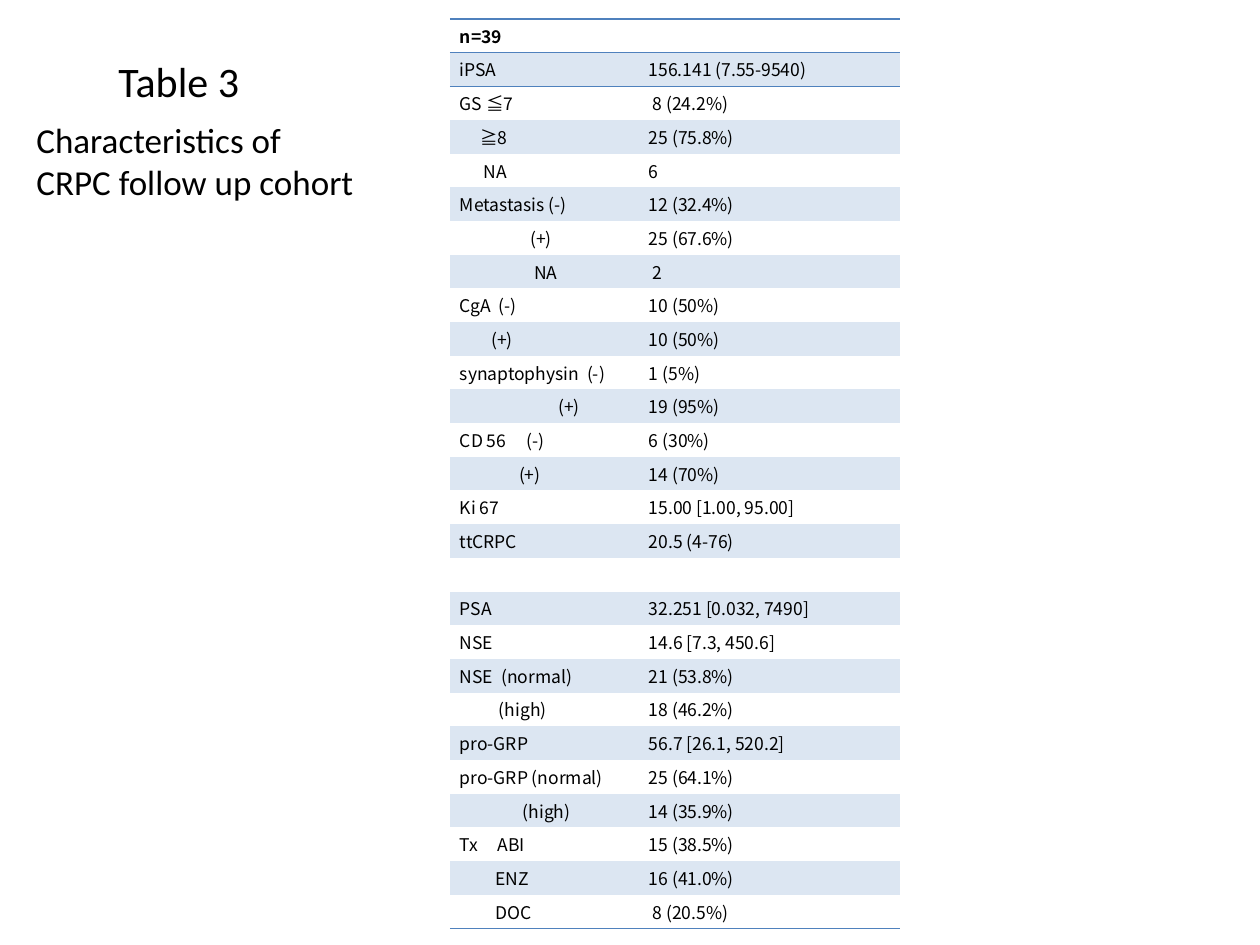
from lxml import etree
from pptx import Presentation
from pptx.dml.color import RGBColor
from pptx.enum.text import MSO_ANCHOR, MSO_AUTO_SIZE, PP_ALIGN
from pptx.oxml.ns import qn
from pptx.util import Inches, Pt

LEFT = PP_ALIGN.LEFT
TOP, MIDDLE = MSO_ANCHOR.TOP, MSO_ANCHOR.MIDDLE
FIXED = MSO_AUTO_SIZE.NONE
SANS, CJK = "Calibri", "Noto Sans CJK JP"
BLACK, BLUE, PALE = "000000", "4F81BD", "DCE6F2"
PLAIN_STYLE = "{2D5ABB26-0587-4C30-8999-92F81FD0307C}"

# Each row: label, offset of its indent or tab stop, value, indent of the value
ROWS = [
    ("n=39", 0, "", 0),
    ("iPSA", 0, "156.141 (7.55-9540)", 0),
    ("GS ≦7", 0, "8 (24.2%)", 0.03),
    ("≧8", 0.16, "25 (75.8%)", 0),
    ("NA", 0.19, "6", 0),
    ("Metastasis (-)", 0, "12 (32.4%)", 0),
    ("(+)", 0.56, "25 (67.6%)", 0),
    ("NA", 0.59, "2", 0.03),
    ("CgA\t(-)", 0.31, "10 (50%)", 0),
    ("(+)", 0.25, "10 (50%)", 0),
    ("synaptophysin\t(-)", 1.01, "1 (5%)", 0),
    ("(+)", 0.78, "19 (95%)", 0),
    ("CD 56\t(-)", 0.53, "6 (30%)", 0),
    ("(+)", 0.47, "14 (70%)", 0),
    ("Ki 67", 0, "15.00 [1.00, 95.00]", 0),
    ("ttCRPC", 0, "20.5 (4-76)", 0),
    ("", 0, "", 0),
    ("PSA", 0, "32.251 [0.032, 7490]", 0),
    ("NSE", 0, "14.6 [7.3, 450.6]", 0),
    ("NSE\t(normal)", 0.33, "21 (53.8%)", 0),
    ("(high)", 0.31, "18 (46.2%)", 0),
    ("pro-GRP", 0, "56.7 [26.1, 520.2]", 0),
    ("pro-GRP (normal)", 0, "25 (64.1%)", 0),
    ("(high)", 0.5, "14 (35.9%)", 0),
    ("Tx\tABI", 0.3, "15 (38.5%)", 0),
    ("ENZ", 0.28, "16 (41.0%)", 0),
    ("DOC", 0.28, "8 (20.5%)", 0.03),
]


def color(code):
    """Return the colour for a hex string."""
    return RGBColor.from_string(code)


def style(para, size, face, bold=False):
    """Set the font and alignment of a paragraph."""
    para.alignment = LEFT
    font = para.font
    font.size, font.name, font.bold = Pt(size), face, bold
    font.color.rgb = color(BLACK)


def write(shape, lines, size, box):
    """Place a shape and fill it with left-aligned lines."""
    shape.left, shape.top, shape.width, shape.height = map(Inches, box)
    frame = shape.text_frame
    frame.text = "\n".join(lines)
    frame.auto_size = FIXED
    frame.word_wrap = len(lines) > 1
    frame.vertical_anchor = TOP
    for para in frame.paragraphs:
        style(para, size, SANS)


def shift(para, inches):
    """Indent a paragraph, or set its tab stop if it holds a tab."""
    props = para._p.get_or_add_pPr()
    offset = str(Inches(inches))
    if "\t" in para.text:
        tabs = etree.SubElement(props, qn("a:tabLst"))
        etree.SubElement(tabs, qn("a:tab"), pos=offset, algn="l")
    else:
        props.set("marL", offset)
        props.set("indent", "0")


def rule(cell, side):
    """Draw a blue border on one side of a cell."""
    props = cell._tc.get_or_add_tcPr()
    line = etree.Element(qn("a:" + side), w=str(Pt(0.96)))
    fill = etree.SubElement(line, qn("a:solidFill"))
    etree.SubElement(fill, qn("a:srgbClr"), val=BLUE)
    props.insert(len(props) - 1, line)


def fill_cell(cell, text, offset, row):
    """Write one table cell with its banding and borders."""
    cell.margin_left = cell.margin_right = Inches(0.08)
    cell.margin_top = cell.margin_bottom = Inches(0.03)
    cell.vertical_anchor = MIDDLE
    para = cell.text_frame.paragraphs[0]
    para.text = text
    shift(para, offset)
    style(para, 10, CJK, bold=row == 0)
    if not text:
        etree.SubElement(para._p, qn("a:endParaRPr"), sz="1000")
    if row % 2:
        cell.fill.solid()
        cell.fill.fore_color.rgb = color(PALE)
    else:
        cell.fill.background()
    if row < 2:
        rule(cell, "lnT")
    if row in (0, len(ROWS) - 1):
        rule(cell, "lnB")


def add_grid(slide):
    """Add the table of cohort characteristics."""
    box = map(Inches, (3.57, 0.15, 3.57, 7.22))
    table = slide.shapes.add_table(len(ROWS), 2, *box).table
    table._tbl.tblPr[0].text = PLAIN_STYLE
    table.first_row = table.horz_banding = False
    for col, width in zip(table.columns, (1.5, 2.07)):
        col.width = Inches(width)
    for row, (label, inset, value, nudge) in enumerate(ROWS):
        fill_cell(table.cell(row, 0), label, inset, row)
        fill_cell(table.cell(row, 1), value, nudge, row)


def main():
    """Build the slide and save it."""
    deck = Presentation()
    deck.slide_width, deck.slide_height = Inches(10), Inches(7.5)
    slide = deck.slides.add_slide(deck.slide_layouts[5])
    add_grid(slide)
    write(slide.shapes.title, ["Table 3"], 24, (0.84, 0.39, 1.18, 0.5))
    box = (0.19, 0.89, 3.01, 0.76)
    note = slide.shapes.add_textbox(*map(Inches, box))
    write(note, ["Characteristics of", "CRPC follow up cohort"], 20, box)
    deck.save("out.pptx")


if __name__ == "__main__":
    main()
